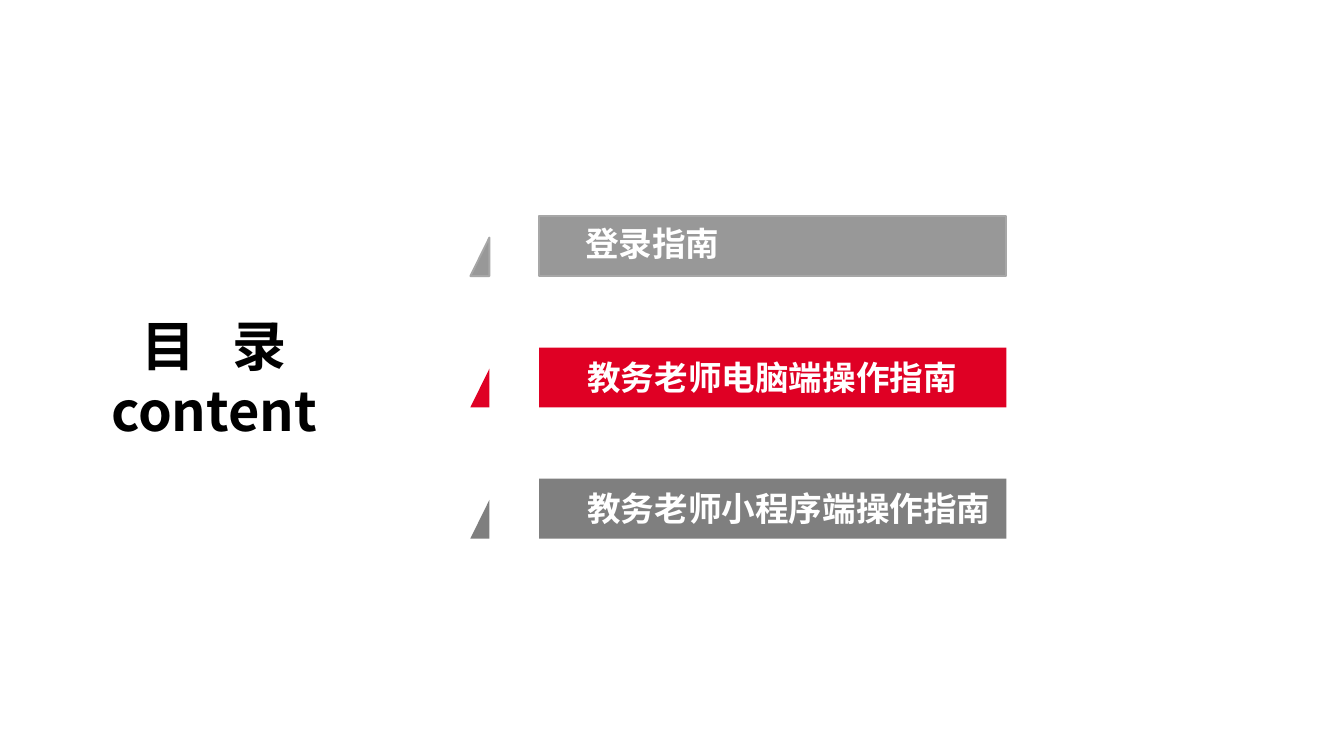
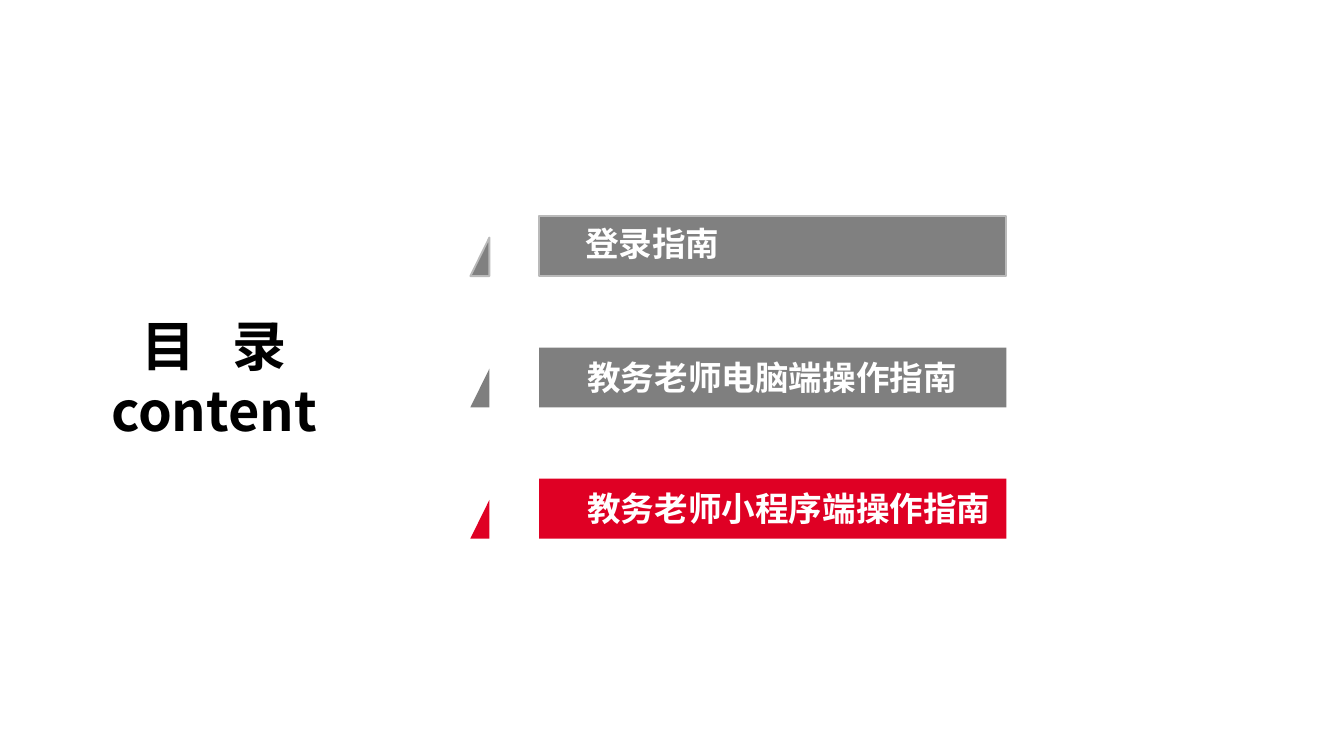
from dataclasses import dataclass
from typing import Optional

from lxml.etree import SubElement
from pptx import Presentation
from pptx.dml.color import RGBColor
from pptx.enum.text import MSO_ANCHOR as Anchor, MSO_AUTO_SIZE as Fit, PP_ALIGN as Align
from pptx.oxml.ns import qn
from pptx.util import Cm, Pt

RED = RGBColor(0xDF, 0x00, 0x24)
GRAY = RGBColor(0x7F, 0x7F, 0x7F)
MID = RGBColor(0x80, 0x80, 0x80)
PALE = RGBColor(0x98, 0x98, 0x98)
EDGE = RGBColor(0xA7, 0xA7, 0xA7)
LIGHT = RGBColor(0xBA, 0xBA, 0xBA)
WHITE = RGBColor(0xFF, 0xFF, 0xFF)
BLACK = RGBColor(0x00, 0x00, 0x00)
FACE = "Noto Sans CJK SC"
LABELS = ("登录指南", "教务老师电脑端操作指南", "教务老师小程序端操作指南")
FIRST, PITCH = 4.09, 2.48
HIGH, NOTCH = 1.13, 0.4
TIP, WEDGE, LEFT, RIGHT = 8.89, 9.25, 10.19, 19.02


@dataclass(frozen=True)
class Paint:
    fill: RGBColor
    line: Optional[RGBColor] = None


AGENDAS = (
    (Paint(PALE, EDGE), Paint(RED), Paint(GRAY)),
    (Paint(MID, LIGHT), Paint(GRAY), Paint(RED)),
)


def style(para, size: float, color: RGBColor, align: Align) -> None:
    para.alignment = align
    font = para.font
    font.size, font.bold, font.name = Pt(size), True, FACE
    font.color.rgb = color
    props = para._p.get_or_add_pPr().get_or_add_defRPr()
    SubElement(props, qn("a:ea")).set("typeface", FACE)


def fit(frame) -> None:
    frame.margin_left = frame.margin_right = 0
    frame.margin_top = frame.margin_bottom = 0
    frame.word_wrap = True
    frame.vertical_anchor = Anchor.MIDDLE
    frame.auto_size = Fit.SHAPE_TO_FIT_TEXT


def head(slide) -> None:
    title = slide.shapes.title
    title.left, title.top = Cm(1.47), Cm(5.89)
    title.width, title.height = Cm(5.16), Cm(2.49)
    frame = title.text_frame
    fit(frame)
    first = frame.paragraphs[0]
    for text in ("目", " ", "录"):
        run = first.add_run()
        run.text = text
        if text == " ":
            run._r.get_or_add_rPr().set("spc", "1300")
    second = frame.add_paragraph()
    second.text = "content"
    for para in frame.paragraphs:
        style(para, 29, BLACK, Align.CENTER)


def bar(slide, top: float, paint: Paint):
    low = top + HIGH
    wedge = [(WEDGE, top + NOTCH), (WEDGE, low), (TIP, low)]
    block = [(LEFT, top), (RIGHT, top), (RIGHT, low), (LEFT, low)]
    wedge, block = ([(Cm(x), Cm(y)) for x, y in part] for part in (wedge, block))
    pen = slide.shapes.build_freeform(*wedge[0], scale=1.0)
    pen.add_line_segments(wedge[1:], close=True)
    pen.move_to(*block[0])
    pen.add_line_segments(block[1:], close=True)
    shape = pen.convert_to_shape()
    shape.shadow.inherit = False
    shape.fill.solid()
    shape.fill.fore_color.rgb = paint.fill
    if paint.line is None:
        shape.line.fill.background()
    else:
        shape.line.color.rgb = paint.line
        shape.line.width = Pt(1)
    return shape


def row(slide, top: float, text: str, paint: Paint) -> None:
    shape = bar(slide, top, paint)
    if paint.line is None:
        box = slide.shapes.add_textbox(Cm(11.1), Cm(top + 0.18), Cm(9.4), Cm(0.76))
        frame = box.text_frame
        fit(frame)
    else:
        frame = shape.text_frame
        frame.margin_left = Cm(2.17)
        frame.vertical_anchor = Anchor.TOP
    para = frame.paragraphs[0]
    para.text = text
    style(para, 18, WHITE, Align.LEFT)


def main() -> None:
    deck = Presentation()
    deck.slide_width, deck.slide_height = Cm(25.4), Cm(14.29)
    for paints in AGENDAS:
        slide = deck.slides.add_slide(deck.slide_layouts[5])
        head(slide)
        for i, (text, paint) in enumerate(zip(LABELS, paints)):
            row(slide, FIRST + i * PITCH, text, paint)
    deck.save("out.pptx")


if __name__ == "__main__":
    main()
